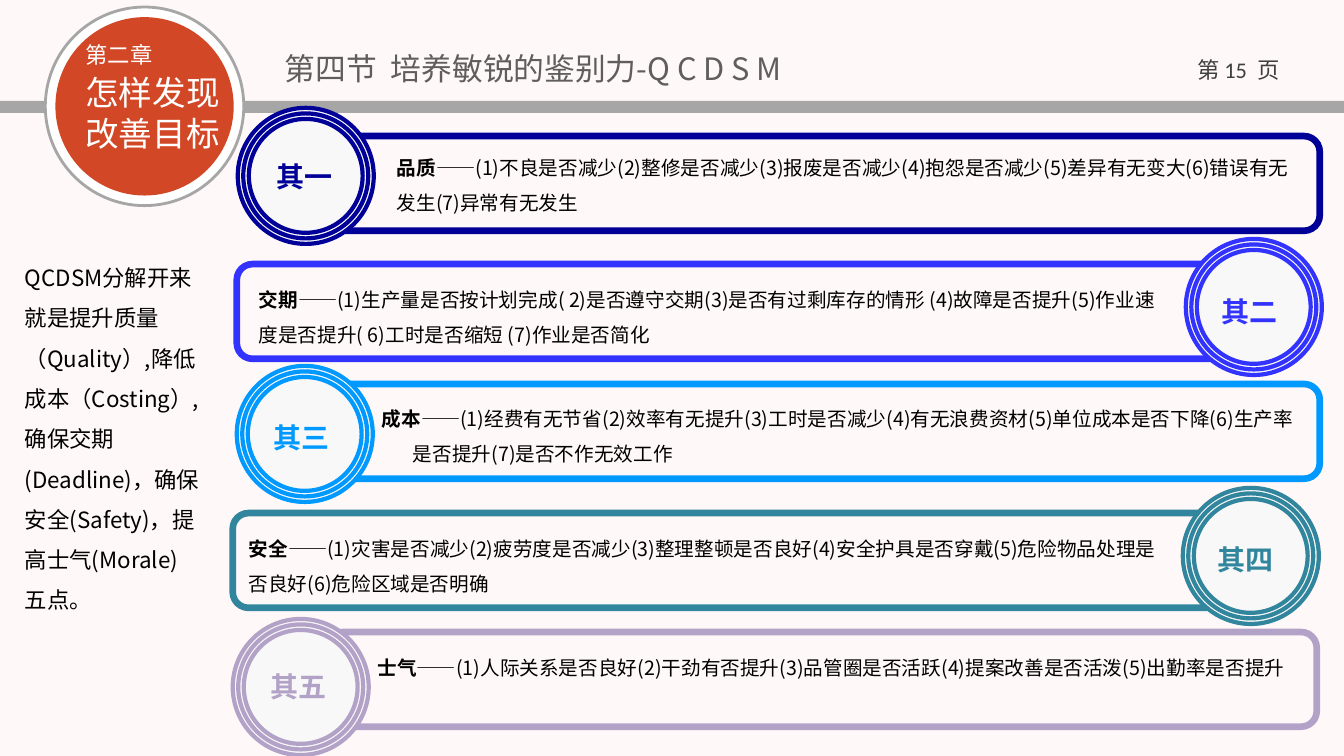
from lxml import etree
from pptx import Presentation
from pptx.dml.color import RGBColor
from pptx.enum.shapes import MSO_SHAPE
from pptx.enum.text import PP_ALIGN
from pptx.oxml.ns import qn
from pptx.util import Inches, Pt

RECT = MSO_SHAPE.RECTANGLE
ROUND = MSO_SHAPE.ROUNDED_RECTANGLE
OVAL = MSO_SHAPE.OVAL
LEFT, CENTER = PP_ALIGN.LEFT, PP_ALIGN.CENTER

BACKGROUND = RGBColor(0xFF, 0xF8, 0xF8)
WHITE = RGBColor(0xFF, 0xFF, 0xFF)
BLACK = RGBColor(0, 0, 0)
GRAY = RGBColor(0xA6, 0xA6, 0xA6)
DARK = RGBColor(0x40, 0x40, 0x40)
TITLE = RGBColor(0x5F, 0x5E, 0x5C)
ORANGE = RGBColor(0xD2, 0x47, 0x26)
PALE = RGBColor(0xF8, 0xF8, 0xF8)
NAVY = RGBColor(0x00, 0x00, 0x99)
BLUE = RGBColor(0x33, 0x33, 0xFF)
SKY = RGBColor(0x00, 0x99, 0xFF)
TEAL = RGBColor(0x31, 0x85, 0x9C)
LILAC = RGBColor(0xB3, 0xA2, 0xC7)

CJK = "Noto Sans CJK SC"
LATIN = "Calibri"

ITEMS = [
    dict(color=NAVY, frame=(3.28, 1.35), badge=(2.36, 1.07), label=(2.65, 1.53), number="其一",
         body=(3.84, 1.38, 9.14), head="品质",
         text="——(1)不良是否减少(2)整修是否减少(3)报废是否减少(4)抱怨是否减少"
              "(5)差异有无变大(6)错误有无发生(7)异常有无发生"),
    dict(color=BLUE, frame=(2.35, 2.62), badge=(11.77, 2.37), label=(12.03, 2.87), number="其二",
         body=(2.47, 2.69, 9.24), head="交期",
         text="——(1)生产量是否按计划完成( 2)是否遵守交期(3)是否有过剩库存的情形 (4)故障是否提升"
              "(5)作业速度是否提升( 6)工时是否缩短 (7)作业是否简化"),
    dict(color=SKY, frame=(3.28, 3.81), badge=(2.35, 3.63), label=(2.62, 4.12), number="其三",
         body=(3.69, 3.87, 9.29), head="成本", hanging=0.31,
         text="——(1)经费有无节省(2)效率有无提升(3)工时是否减少(4)有无浪费资材"
              "(5)单位成本是否下降(6)生产率是否提升(7)是否不作无效工作"),
    dict(color=TEAL, frame=(2.31, 5.09), badge=(11.74, 4.84), label=(11.99, 5.33), number="其四",
         body=(2.37, 5.16, 9.31), head="安全",
         text="——(1)灾害是否减少(2)疲劳度是否减少(3)整理整顿是否良好(4)安全护具是否穿戴"
              "(5)危险物品处理是否良好(6)危险区域是否明确"),
    dict(color=LILAC, frame=(3.25, 6.27), badge=(2.31, 6.14), label=(2.59, 6.59), number="其五",
         body=(3.65, 6.34, 9.32), head="士气",
         text="——(1)人际关系是否良好(2)干劲有否提升(3)品管圈是否活跃(4)提案改善是否活泼"
              "(5)出勤率是否提升"),
]


def add_run(p, text, size=14, color=BLACK, bold=False, font=CJK):
    r = p.add_run()
    r.text = text
    r.font.size = Pt(size)
    r.font.bold = bold
    r.font.color.rgb = color
    r.font.name = font
    etree.SubElement(r.font._element, qn("a:ea")).set("typeface", CJK)


class SlideBuilder:
    def __init__(self, slide):
        self.slide = slide
        fill = slide.background.fill
        fill.solid()
        fill.fore_color.rgb = BACKGROUND

    def shape(self, kind, x, y, w, h, fill=None, line=None, width=1):
        sp = self.slide.shapes.add_shape(kind, Inches(x), Inches(y), Inches(w), Inches(h))
        sp.shadow.inherit = False
        if fill is None:
            sp.fill.background()
        else:
            sp.fill.solid()
            sp.fill.fore_color.rgb = fill
        if line is None:
            sp.line.fill.background()
        else:
            sp.line.color.rgb = line
            sp.line.width = Pt(width)

    def text(self, x, y, w, h, *paragraphs, align=LEFT, spacing=None, after=0, hanging=0):
        sp = self.slide.shapes.add_textbox(Inches(x), Inches(y), Inches(w), Inches(h))
        tf = sp.text_frame
        tf.word_wrap = True
        for i, runs in enumerate(paragraphs):
            p = tf.add_paragraph() if i else tf.paragraphs[0]
            p.alignment = align
            p.space_after = Pt(after)
            if spacing:
                p.line_spacing = spacing
            if hanging:
                pPr = p._p.get_or_add_pPr()
                pPr.set("marL", str(Inches(hanging)))
                pPr.set("indent", str(-Inches(hanging)))
            for text, style in runs:
                add_run(p, text, **style)

    def badge(self, x, y, color):
        for ring in range(3):
            inset = 0.055 * ring
            size = 1.35 - 2 * inset
            self.shape(OVAL, x + inset, y + inset, size, size,
                       fill=None if ring else PALE, line=color, width=3)

    def item(self, color, frame, badge, label, number, body, head, text, hanging=0):
        self.shape(ROUND, *frame, 9.82, 0.94, line=color, width=4.75)
        self.badge(*badge, color)
        self.text(*label, 1.09, 0.44, [(number, dict(size=20, color=color, bold=True))])
        self.text(*body, 0.81, [(head, dict(bold=True)), (text, {})],
                  spacing=1.5, hanging=hanging)

    def header(self):
        self.shape(RECT, 0, 1, 13.34, 0.12, fill=GRAY)
        self.shape(OVAL, 0.45, 0.07, 1.97, 1.97, fill=WHITE, line=GRAY, width=2)
        self.shape(OVAL, 0.55, 0.17, 1.77, 1.77, fill=ORANGE)
        page = dict(size=16, color=DARK)
        self.text(11.69, 0.51, 1.2, 0.4,
                  [("第 ", page), ("15  ", dict(page, font=LATIN)), ("页", page)], align=CENTER)
        self.text(0.75, 0.36, 1.73, 1.22,
                  [("第二章", dict(size=16, color=WHITE))],
                  [("怎样发现改善目标", dict(size=24, color=WHITE))], after=3)
        self.text(2.73, 0.44, 5.44, 0.47,
                  [("第四节  培养敏锐的鉴别力-Q C D S M", dict(size=22, color=TITLE))])


def main():
    prs = Presentation()
    prs.slide_width, prs.slide_height = Inches(13.34), Inches(7.5)
    s = SlideBuilder(prs.slides.add_slide(prs.slide_layouts[6]))
    s.header()
    for item in ITEMS:
        s.item(**item)
    s.text(0.15, 2.44, 1.93, 3.74,
           [("QCDSM分解开来就是提升质量（Quality）,降低成本（Costing）,确保交期(Deadline)，"
             "确保安全(Safety)，提高士气(Morale)五点。", dict(size=16))], spacing=1.5)
    prs.save("out.pptx")


if __name__ == "__main__":
    main()
